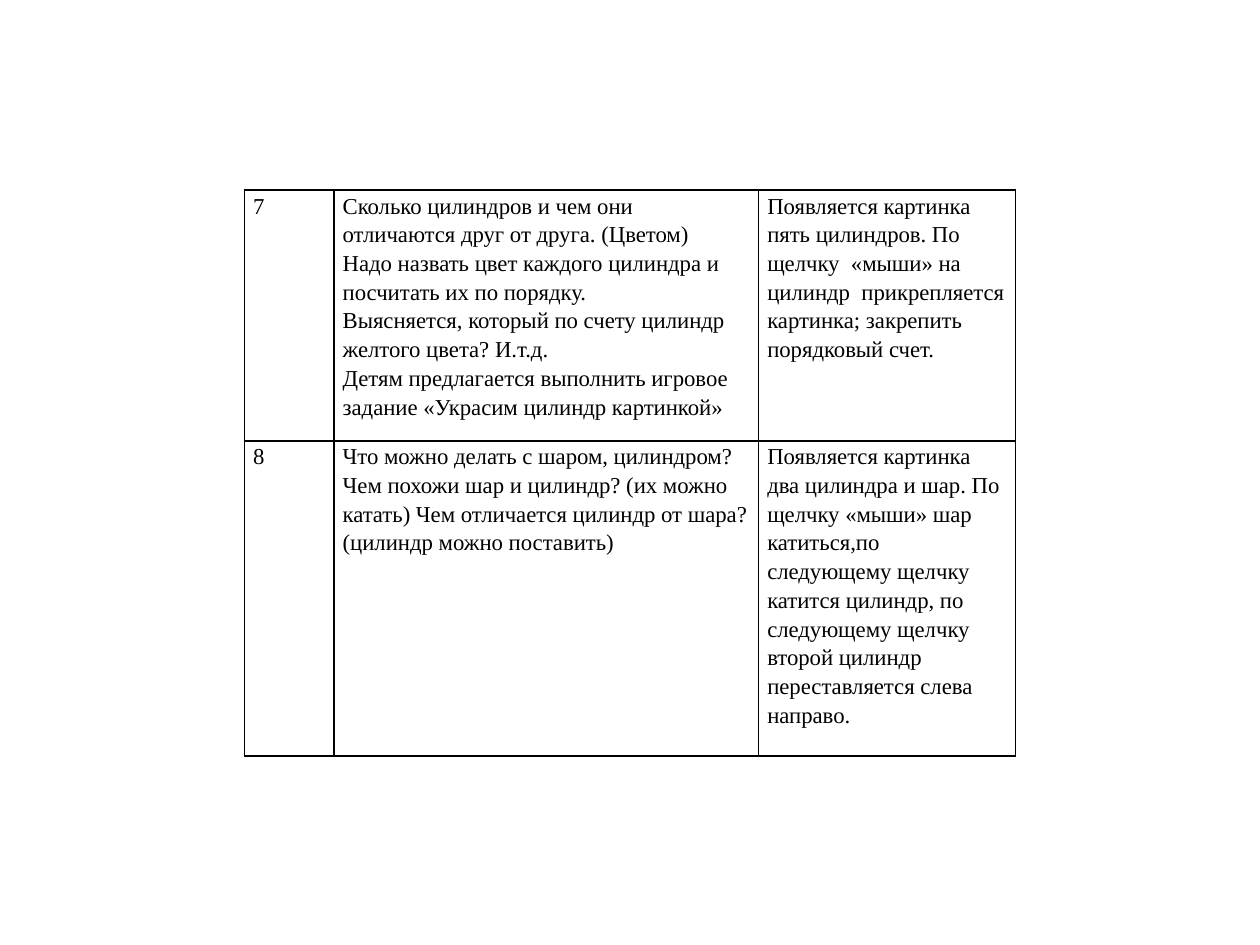
from dataclasses import dataclass

from lxml.etree import SubElement
from pptx import Presentation
from pptx.dml.color import RGBColor
from pptx.oxml.ns import qn
from pptx.table import _Cell as Cell
from pptx.util import Inches, Pt


@dataclass(frozen=True)
class Theme:
    font: str = "Times New Roman"
    ink: str = "000000"
    paper: str = "FFFFFF"
    size: float = 13
    line_spacing: float = 1.15
    border: float = 1


@dataclass(frozen=True)
class Step:
    number: str
    tasks: tuple[str, ...]
    action: str
    height: float


THEME = Theme()
LEFT, TOP = 1.94, 1.51
COLUMN_WIDTHS = (0.71, 3.37, 2.04)
SIDE_MARGIN = 0.07
STEPS = (
    Step(
        "7",
        (
            "Сколько цилиндров и чем они отличаются друг от друга. (Цветом)",
            "Надо назвать цвет каждого цилиндра и посчитать их по порядку.",
            "Выясняется, который по счету цилиндр желтого цвета? И.т.д.",
            "Детям предлагается выполнить игровое задание «Украсим цилиндр картинкой»",
        ),
        "Появляется картинка пять цилиндров. По щелчку  «мыши» на цилиндр  "
        "прикрепляется картинка; закрепить порядковый счет.",
        1.99,
    ),
    Step(
        "8",
        (
            "Что можно делать с шаром, цилиндром? Чем похожи шар и цилиндр? "
            "(их можно катать) Чем отличается цилиндр от шара? "
            "(цилиндр можно поставить)",
        ),
        "Появляется картинка два цилиндра и шар. По щелчку «мыши» шар "
        "катиться,по следующему щелчку катится цилиндр, по следующему щелчку "
        "второй цилиндр переставляется слева направо.",
        2.5,
    ),
)


def add_borders(cell: Cell, *, color: str, width: float) -> None:
    properties = cell._tc.get_or_add_tcPr()
    for side in ("a:lnL", "a:lnR", "a:lnT", "a:lnB"):
        line = SubElement(properties, qn(side), w=str(Pt(width)))
        fill = SubElement(line, qn("a:solidFill"))
        SubElement(fill, qn("a:srgbClr"), val=color)


def write_text(
    cell: Cell, texts: tuple[str, ...], *, font: str, size: float, color: str, spacing: float
) -> None:
    cell.text_frame.text = "\n".join(texts)
    for para in cell.text_frame.paragraphs:
        para.line_spacing = spacing
        for span in para.runs:
            span.font.name = font
            span.font.size = Pt(size)
            span.font.color.rgb = RGBColor.from_string(color)


def fill_cell(cell: Cell, texts: tuple[str, ...]) -> None:
    cell.margin_left = cell.margin_right = Inches(SIDE_MARGIN)
    cell.margin_top = cell.margin_bottom = 0
    add_borders(cell, color=THEME.ink, width=THEME.border)
    cell.fill.solid()
    cell.fill.fore_color.rgb = RGBColor.from_string(THEME.paper)
    write_text(
        cell,
        texts,
        font=THEME.font,
        size=THEME.size,
        color=THEME.ink,
        spacing=THEME.line_spacing,
    )


def main() -> None:
    deck = Presentation()
    deck.slide_width, deck.slide_height = Inches(10), Inches(7.5)
    page = deck.slides.add_slide(deck.slide_layouts[6])
    table = page.shapes.add_table(
        len(STEPS),
        len(COLUMN_WIDTHS),
        Inches(LEFT),
        Inches(TOP),
        Inches(sum(COLUMN_WIDTHS)),
        Inches(sum(step.height for step in STEPS)),
    ).table
    table.first_row = table.horz_banding = False
    for column, width in zip(table.columns, COLUMN_WIDTHS):
        column.width = Inches(width)
    for row, step in zip(table.rows, STEPS):
        row.height = Inches(step.height)
        for cell, texts in zip(row.cells, ((step.number,), step.tasks, (step.action,))):
            fill_cell(cell, texts)
    deck.save("out.pptx")


if __name__ == "__main__":
    main()
